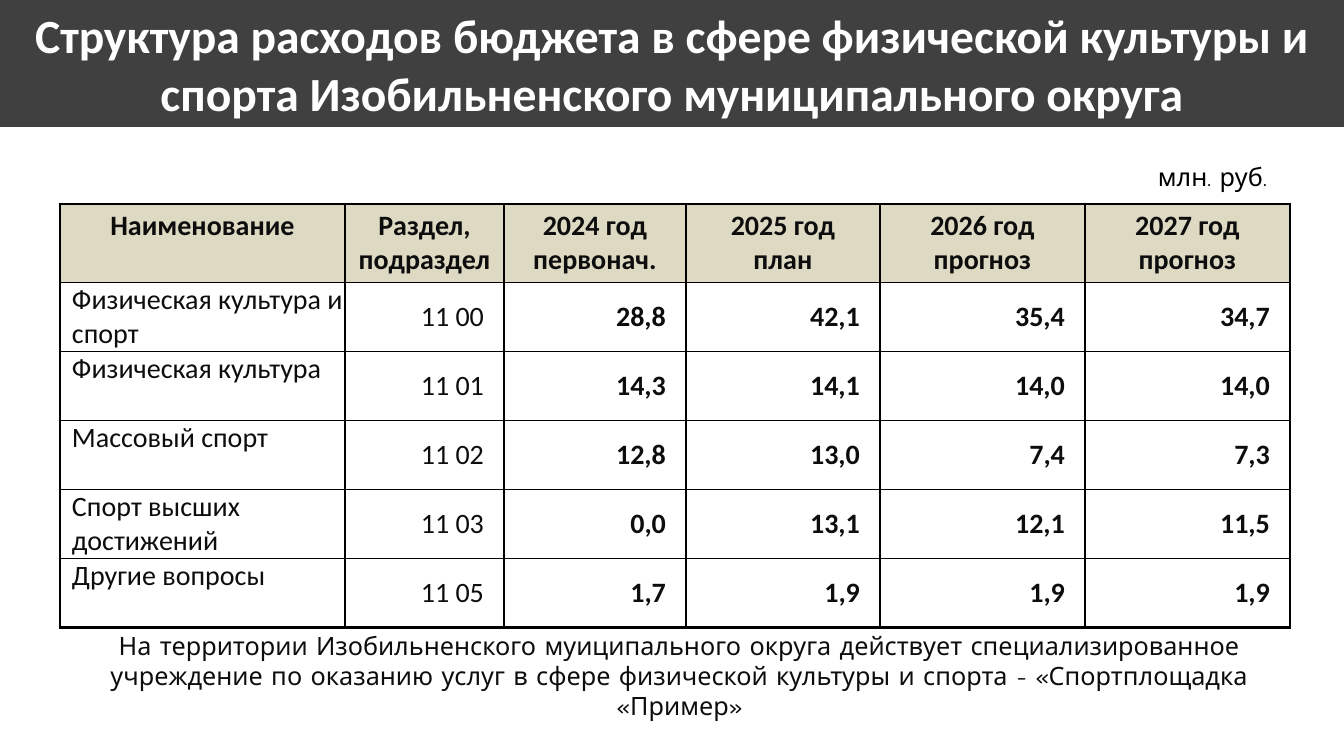
from lxml import etree
from pptx import Presentation
from pptx.dml.color import RGBColor
from pptx.enum.text import MSO_ANCHOR, MSO_AUTO_SIZE, PP_ALIGN
from pptx.oxml.ns import qn
from pptx.util import Pt

PX = 9071
LEFT, MID, RIGHT = PP_ALIGN.LEFT, PP_ALIGN.CENTER, PP_ALIGN.RIGHT
TOP, CENTRE = MSO_ANCHOR.TOP, MSO_ANCHOR.MIDDLE
FIXED = MSO_AUTO_SIZE.NONE

WHITE = RGBColor(0xFF, 0xFF, 0xFF)
BLACK = RGBColor(0, 0, 0)
INK = RGBColor(0x0D, 0x0D, 0x0D)
DARK = RGBColor(0x40, 0x40, 0x40)
SAND = RGBColor(0xDD, 0xD9, 0xC3)
SANS, COMIC = "Calibri", "Comic Neue"

TITLE = ("Структура расходов бюджета в сфере физической культуры и спорта "
         "Изобильненского муниципального округа")
NOTE = ["На территории Изобильненского муиципального округа действует специализированное",
        "учреждение по оказанию услуг в сфере физической культуры и спорта - "
        "«Спортплощадка «Пример»"]
WIDTHS = [285, 159, 182, 194, 205, 205]
HEAD_H, ROW_H = 78, 69
ROWS = [
    ["Наименование", "Раздел, подраздел", "2024 год первонач.",
     "2025 год\vплан", "2026 год\vпрогноз", "2027 год\vпрогноз"],
    ["Физическая культура и спорт", "11 00", "28,8", "42,1", "35,4", "34,7"],
    ["Физическая культура", "11 01", "14,3", "14,1", "14,0", "14,0"],
    ["Массовый спорт", "11 02", "12,8", "13,0", "7,4", "7,3"],
    ["Спорт высших достижений", "11 03", "0,0", "13,1", "12,1", "11,5"],
    ["Другие вопросы", "11 05", "1,7", "1,9", "1,9", "1,9"],
]
# Insets run left, top, right, bottom.
HEAD = dict(align=MID, anchor=TOP, bold=True, pad=(10, 5, 10, 5))
NAME = dict(align=LEFT, anchor=TOP, bold=False, pad=(12, 0, 0, 0))
CODE = dict(align=RIGHT, anchor=CENTRE, bold=False, pad=(0, 0, 20, 0))
SUM = dict(CODE, bold=True)


def put(item, fmt):
    for key, val in fmt.items():
        setattr(item, key, val)


def write(frame, lines, align, color, **font):
    """Fill a text frame with one paragraph per line."""
    frame.text = "\n".join(lines)
    for para in frame.paragraphs:
        para.alignment = align
        for run in para.runs:
            put(run.font, font)
            run.font.color.rgb = color


def place(shape, *box):
    names = ("left", "top", "width", "height")
    put(shape, {name: val * PX for name, val in zip(names, box)})


def add_title(slide):
    title = slide.shapes.title
    place(title, 0, 0, 1344, 127)
    title.fill.solid()
    title.fill.fore_color.rgb = DARK
    put(title.text_frame, dict(word_wrap=True, auto_size=FIXED,
                               vertical_anchor=CENTRE))
    write(title.text_frame, [TITLE], MID, WHITE,
          name=SANS, size=Pt(34), bold=True)


def add_text(slide, box, lines, align, color, **frame):
    shape = slide.shapes.add_textbox(*(val * PX for val in box))
    put(shape.text_frame, frame)
    write(shape.text_frame, lines, align, color, name=COMIC, size=Pt(18))


def add_edge(cell, side, width):
    line = etree.SubElement(cell._tc.get_or_add_tcPr(), qn(f"a:ln{side}"),
                            w=str(Pt(width)))
    fill = etree.SubElement(line, qn("a:solidFill"))
    etree.SubElement(fill, qn("a:srgbClr"), val=str(BLACK))


def fill_cell(cell, text, align, anchor, bold, pad):
    write(cell.text_frame, [text], align, INK,
          name=SANS, size=Pt(20), bold=bold)
    names = ("margin_left", "margin_top", "margin_right", "margin_bottom")
    put(cell, {name: val * PX for name, val in zip(names, pad)})
    cell.vertical_anchor = anchor


def add_grid(slide):
    high, wide = len(ROWS), len(WIDTHS)
    box = (60, 204, sum(WIDTHS), HEAD_H + ROW_H * (high - 1))
    table = slide.shapes.add_table(high, wide, *(val * PX for val in box)).table
    put(table, dict(first_row=False, horz_banding=False))
    for col, width in zip(table.columns, WIDTHS):
        col.width = width * PX
    for i, row in enumerate(ROWS):
        table.rows[i].height = (ROW_H if i else HEAD_H) * PX
        for j, text in enumerate(row):
            cell = table.cell(i, j)
            style = (NAME, CODE, SUM)[min(j, 2)] if i else HEAD
            fill_cell(cell, text, **style)
            outer = dict(L=j == 0, R=j == wide - 1, T=i == 0, B=i == high - 1)
            for side, thick in outer.items():
                add_edge(cell, side, 2.25 if thick else 1)
            if i:
                cell.fill.background()
            else:
                cell.fill.solid()
                cell.fill.fore_color.rgb = SAND


def main():
    deck = Presentation()
    put(deck, dict(slide_width=1344 * PX, slide_height=756 * PX))
    slide = deck.slides.add_slide(deck.slide_layouts[5])
    add_title(slide)
    add_grid(slide)
    add_text(slide, (1148, 156, 129, 40), ["млн. руб."], LEFT, BLACK,
             word_wrap=False)
    add_text(slide, (35, 625, 1289, 102), NOTE, MID, INK, word_wrap=True,
             margin_left=40 * PX, margin_right=40 * PX)
    deck.save("out.pptx")


if __name__ == "__main__":
    main()
